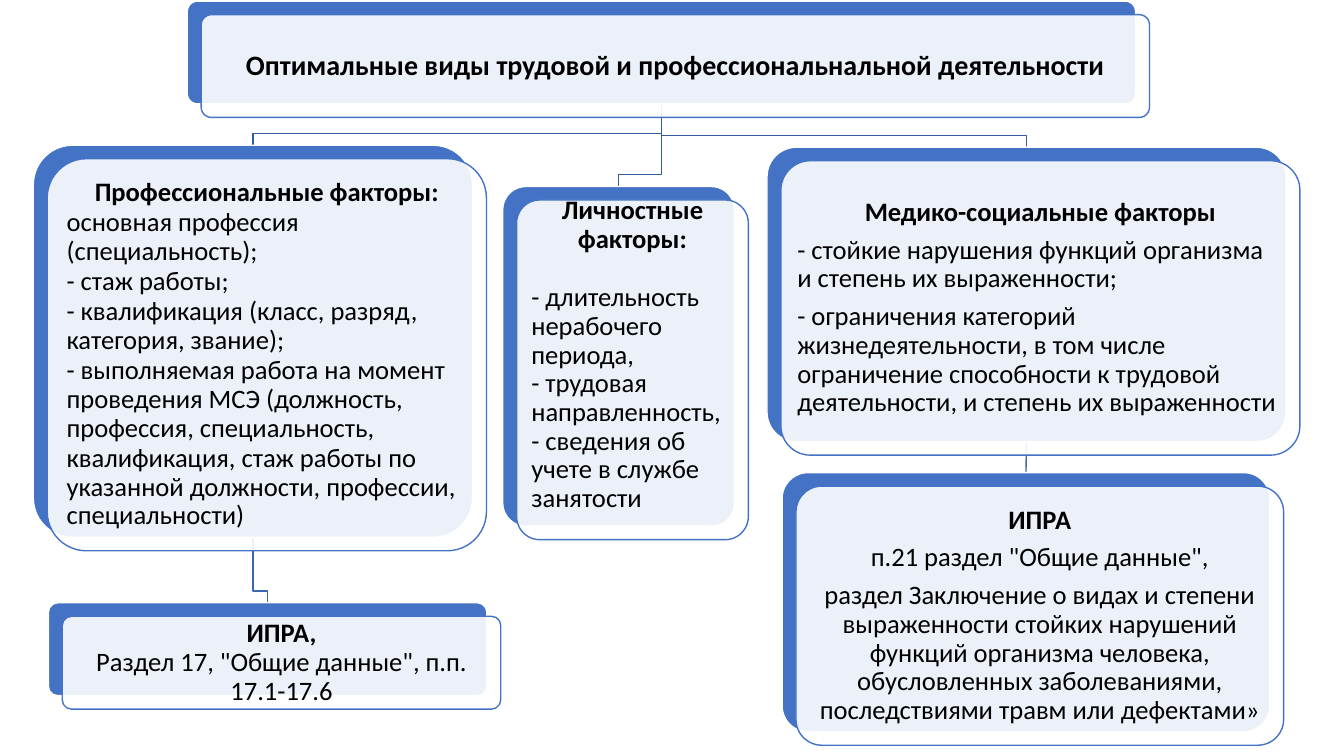
from pptx import Presentation
from pptx.dml.color import RGBColor
from pptx.enum.shapes import MSO_CONNECTOR as Link, MSO_SHAPE as Shape
from pptx.enum.text import MSO_ANCHOR as Anchor, PP_ALIGN as Align
from pptx.oxml.ns import qn
from pptx.util import Cm, Pt
from lxml import etree

BLUE = RGBColor(0x44, 0x72, 0xC4)
WHITE = RGBColor(0xFF, 0xFF, 0xFF)
BLACK = RGBColor(0, 0, 0)
TOP_LINK = RGBColor(0x36, 0x5B, 0x9D)
LOWER_LINK = RGBColor(0x3E, 0x67, 0xB2)
SHIFT_X, SHIFT_Y = Cm(0.35), Cm(0.34)
BEND_GAP = Cm(0.3)
INSET = Cm(0.2)


def add_card(left, top, width, height, fill, line):
    card = page.shapes.add_shape(Shape.ROUNDED_RECTANGLE, left, top, width, height)
    card.adjustments[0] = 0.1
    card.shadow.inherit = False
    card.fill.solid()
    card.fill.fore_color.rgb = fill
    card.line.color.rgb = line
    card.line.width = Pt(1)
    return card


def write(frame, heading, items, size=19, align=Align.LEFT, after=0, heading_after=None, bottom=INSET):
    """Put a bold centred heading and plain paragraphs into a text frame."""
    frame.word_wrap = True
    frame.vertical_anchor = Anchor.MIDDLE
    frame.margin_left = frame.margin_right = frame.margin_top = INSET
    frame.margin_bottom = bottom
    for index, text in enumerate([heading, *items]):
        para = frame.add_paragraph() if index else frame.paragraphs[0]
        para.alignment = align if index else Align.CENTER
        para.line_spacing = 0.9
        para.space_after = Pt(after if index or heading_after is None else heading_after)
        span = para.add_run()
        span.text = text
        span.font.name = "Calibri"
        span.font.size = Pt(size)
        span.font.bold = index == 0
        span.font.color.rgb = BLACK


deck = Presentation()
deck.slide_width, deck.slide_height = Cm(33.87), Cm(19.05)
page = deck.slides.add_slide(deck.slide_layouts[6])

# Cards: name, (left, top, width, height) in cm, heading, paragraphs, text format
cards = [
    ("title", (4.72, 0.03, 23.9, 2.59),
     "Оптимальные виды трудовой и профессиональнальной деятельности", [],
     dict(size=20, after=7)),
    ("professional", (0.84, 3.66, 11.07, 9.88), "Профессиональные факторы:", [
        "основная профессия (специальность);",
        "- стаж работы;",
        "- квалификация (класс, разряд, категория, звание);",
        "- выполняемая работа на момент проведения МСЭ (должность, профессия, специальность,",
        "квалификация, стаж работы по указанной должности, профессии, специальности)",
    ], dict(after=1)),
    ("section 17", (1.22, 15.19, 11.05, 2.34), "ИПРА,",
     ['Раздел 17, "Общие данные", п.п. 17.1-17.6'], dict(align=Align.CENTER)),
    ("personal", (12.67, 4.7, 5.84, 8.56), "Личностные факторы:", [
        "- длительность нерабочего периода,",
        "- трудовая направленность,",
        "- сведения об учете в службе занятости",
    ], dict(heading_after=21, bottom=Cm(0.94))),
    ("medical", (19.33, 3.71, 13.08, 7.42), "Медико-социальные факторы", [
        "- стойкие нарушения функций организма и степень их выраженности;",
        "- ограничения категорий жизнедеятельности, в том числе ограничение способности "
        "к трудовой деятельности, и степень их выраженности",
    ], dict(after=6.5)),
    ("section 21", (19.71, 11.91, 12.29, 6.53), "ИПРА", [
        'п.21 раздел "Общие данные",',
        "раздел Заключение о видах и степени выраженности стойких нарушений функций организма "
        "человека, обусловленных заболеваниями, последствиями травм или дефектами»",
    ], dict(align=Align.CENTER, after=6.5)),
]

backs = {}
for name, place, heading, items, text_format in cards:
    left, top, width, height = (Cm(value) for value in place)
    backs[name] = add_card(left, top, width, height, BLUE, WHITE)
    front = add_card(left + SHIFT_X, top + SHIFT_Y, width, height, WHITE, BLUE)
    color = front.fill._xPr.find(qn("a:solidFill"))[0]
    etree.SubElement(color, qn("a:alpha")).set("val", "90000")
    write(front.text_frame, heading, items, **text_format)

# Links, kept behind the cards
links = []
for parent_name, child_name, color in [
    ("title", "professional", TOP_LINK),
    ("professional", "section 17", LOWER_LINK),
    ("title", "personal", TOP_LINK),
    ("title", "medical", TOP_LINK),
]:
    parent, child = backs[parent_name], backs[child_name]
    start_x, start_y = parent.left + parent.width // 2, parent.top + parent.height
    end_x, bend_y = child.left + child.width // 2, child.top - BEND_GAP
    outline = page.shapes.build_freeform(start_x, start_y)
    outline.add_line_segments([(start_x, bend_y), (end_x, bend_y), (end_x, child.top)], close=False)
    link = outline.convert_to_shape()
    link.shadow.inherit = False
    link.fill.background()
    link.line.color.rgb = color
    links.append(link)

straight = page.shapes.add_connector(Link.STRAIGHT, 0, 0, 0, 0)
straight.begin_connect(backs["medical"], 2)
straight.end_connect(backs["section 21"], 0)
straight.line.color.rgb = LOWER_LINK
etree.SubElement(straight.element.spPr, qn("a:effectLst"))
links.append(straight)

for link in links:
    link.line.width = Pt(1)
    link.element.getparent().insert(2, link.element)

deck.save("out.pptx")
